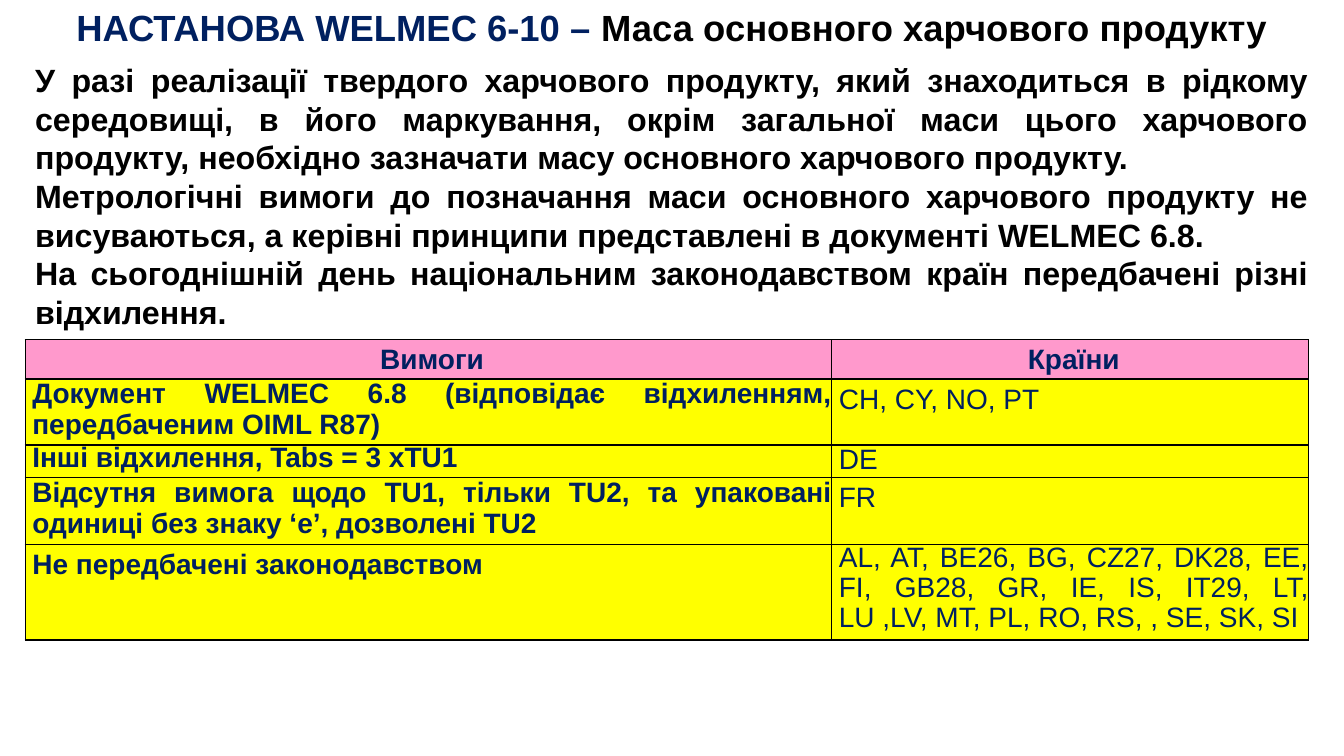
from dataclasses import dataclass

from lxml.etree import SubElement
from pptx import Presentation
from pptx.dml.color import RGBColor
from pptx.enum.text import PP_ALIGN
from pptx.oxml.ns import qn
from pptx.slide import Slide
from pptx.table import _Cell
from pptx.text.text import TextFrame, _Paragraph
from pptx.util import Emu, Pt

PX = 9144  # 100 px to the inch
FONT = "Arial"
COLORS = {"navy": "002060", "black": "000000", "pink": "FF99CC", "yellow": "FFFF00"}
INDENT = 7
COLS = (800, 473)
LEFT, CENTER, JUSTIFY = PP_ALIGN.LEFT, PP_ALIGN.CENTER, PP_ALIGN.JUSTIFY

BODY = (
    "У разі реалізації твердого харчового продукту, який знаходиться в рідкому "
    "середовищі, в його маркування, окрім загальної маси цього харчового продукту, "
    "необхідно зазначати масу основного харчового продукту.",
    "Метрологічні вимоги до позначання маси основного харчового продукту не "
    "висуваються, а керівні принципи представлені в документі WELMEC 6.8.",
    "На сьогоднішній день національним законодавством країн передбачені різні "
    "відхилення.",
)


@dataclass
class Entry:
    text: str
    line: float = 1.15
    align: PP_ALIGN = LEFT
    bold: bool = False


@dataclass
class Row:
    height: int
    rule: Entry
    lands: Entry
    fill: str = "yellow"


ROWS = (
    Row(39, Entry("Вимоги", 1.15, CENTER, True), Entry("Країни", 1.15, CENTER, True), "pink"),
    Row(65, Entry("Документ WELMEC 6.8 (відповідає відхиленням, передбаченим OIML R87)",
                  0.98, JUSTIFY, True), Entry("CH, CY, NO, PT")),
    Row(32, Entry("Інші відхилення, Tabs = 3 xTU1", 0.92, JUSTIFY, True), Entry("DE", 0.97)),
    Row(66, Entry("Відсутня вимога щодо TU1, тільки TU2, та упаковані одиниці без знаку "
                  "‘e’, дозволені TU2", 0.99, JUSTIFY, True), Entry("FR")),
    Row(95, Entry("Не передбачені законодавством", 1.15, JUSTIFY, True),
        Entry("AL, AT, BE26, BG, CZ27, DK28, EE, FI, GB28, GR, IE, IS, IT29, LT, "
              "LU ,LV, MT, PL, RO, RS, , SE, SK, SI", 0.95, JUSTIFY)),
)


def px(size: int) -> Emu:
    return Emu(size * PX)


def write(para: _Paragraph, text: str, *, size: int, color: str, bold: bool = True,
          align: PP_ALIGN = LEFT) -> None:
    para.alignment = align
    run = para.add_run()
    run.text = text
    run.font.name = FONT
    run.font.size = Pt(size)
    run.font.bold = bold
    run.font.color.rgb = RGBColor.from_string(COLORS[color])


def add_box(slide: Slide, left: int, top: int, width: int, height: int) -> TextFrame:
    frame = slide.shapes.add_textbox(px(left), px(top), px(width), px(height)).text_frame
    frame.word_wrap = True
    return frame


def add_edges(cell: _Cell) -> None:
    props = cell._tc.get_or_add_tcPr()
    for side in ("lnL", "lnR", "lnT", "lnB"):
        line = SubElement(props, qn(f"a:{side}"), w=str(Pt(1)))
        fill = SubElement(line, qn("a:solidFill"))
        SubElement(fill, qn("a:srgbClr"), val=COLORS["black"])


def fill_cell(cell: _Cell, entry: Entry, fill: str) -> None:
    cell.margin_left = cell.margin_right = cell.margin_top = cell.margin_bottom = 0
    add_edges(cell)
    cell.fill.solid()
    cell.fill.fore_color.rgb = RGBColor.from_string(COLORS[fill])
    para = cell.text_frame.paragraphs[0]
    para.line_spacing = entry.line
    props = para._p.get_or_add_pPr()
    props.set("marL", str(px(INDENT)))
    props.set("indent", "0")
    write(para, entry.text, size=20, color="navy", bold=entry.bold, align=entry.align)


def add_rules(slide: Slide) -> None:
    """Draw the table of requirements and countries."""
    high = sum(row.height for row in ROWS)
    table = slide.shapes.add_table(len(ROWS), len(COLS), px(25), px(337),
                                   px(sum(COLS)), px(high)).table
    table.first_row = table.horz_banding = False
    for col, width in zip(table.columns, COLS):
        col.width = px(width)
    for line, row in zip(table.rows, ROWS):
        line.height = px(row.height)
        for cell, entry in zip(line.cells, (row.rule, row.lands)):
            fill_cell(cell, entry, row.fill)


def main() -> None:
    deck = Presentation()
    deck.slide_width, deck.slide_height = px(1333), px(750)
    slide = deck.slides.add_slide(deck.slide_layouts[6])

    body = add_box(slide, 25, 55, 1284, 282)
    for index, text in enumerate(BODY):
        para = body.add_paragraph() if index else body.paragraphs[0]
        write(para, text, size=23, color="black", align=JUSTIFY)

    title = add_box(slide, 0, 0, 1333, 101).paragraphs[0]
    write(title, "НАСТАНОВА WELMEC 6-10 – ", size=26, color="navy", align=CENTER)
    write(title, "Маса основного харчового продукту", size=26, color="black", align=CENTER)

    add_rules(slide)
    deck.save("out.pptx")


if __name__ == "__main__":
    main()
